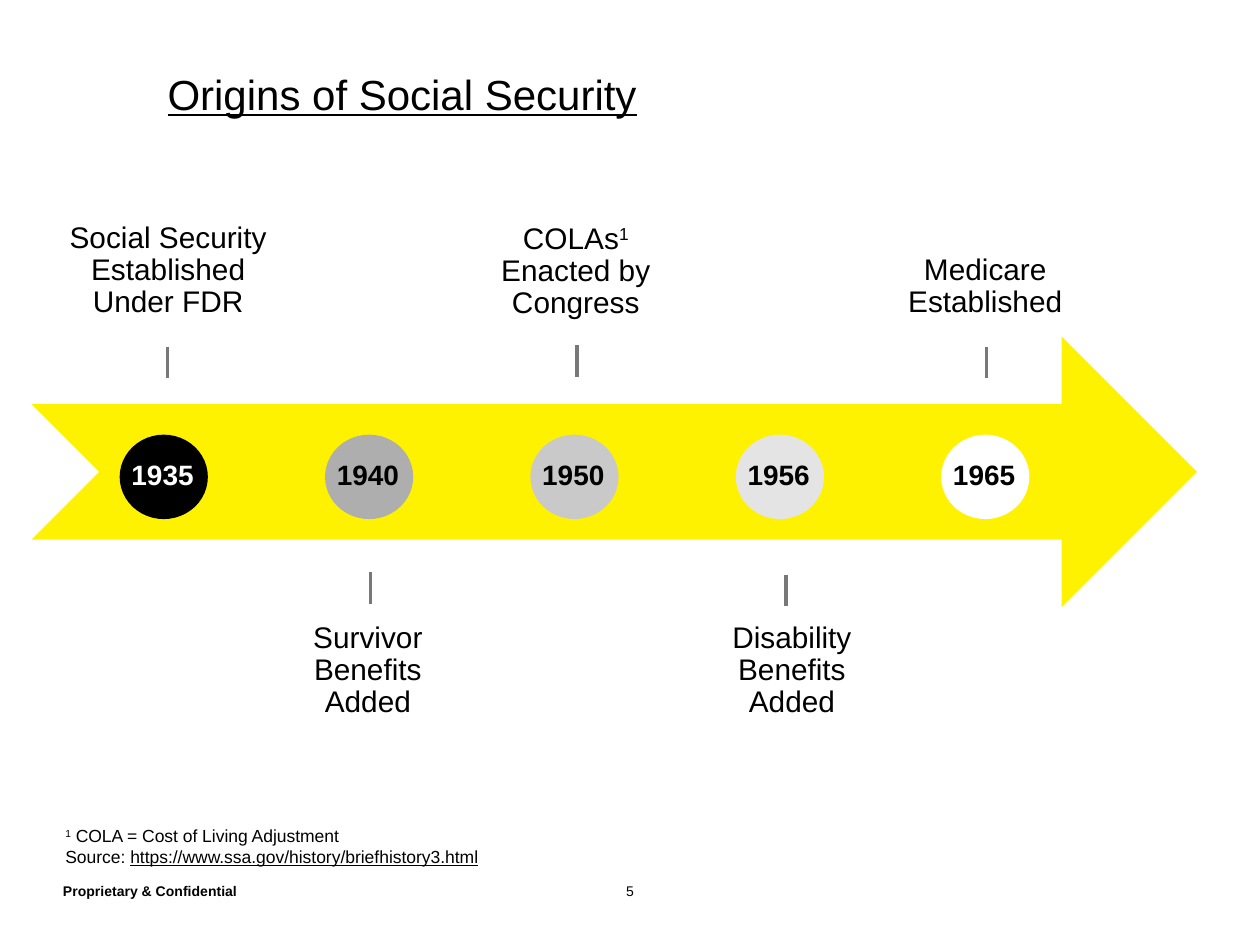
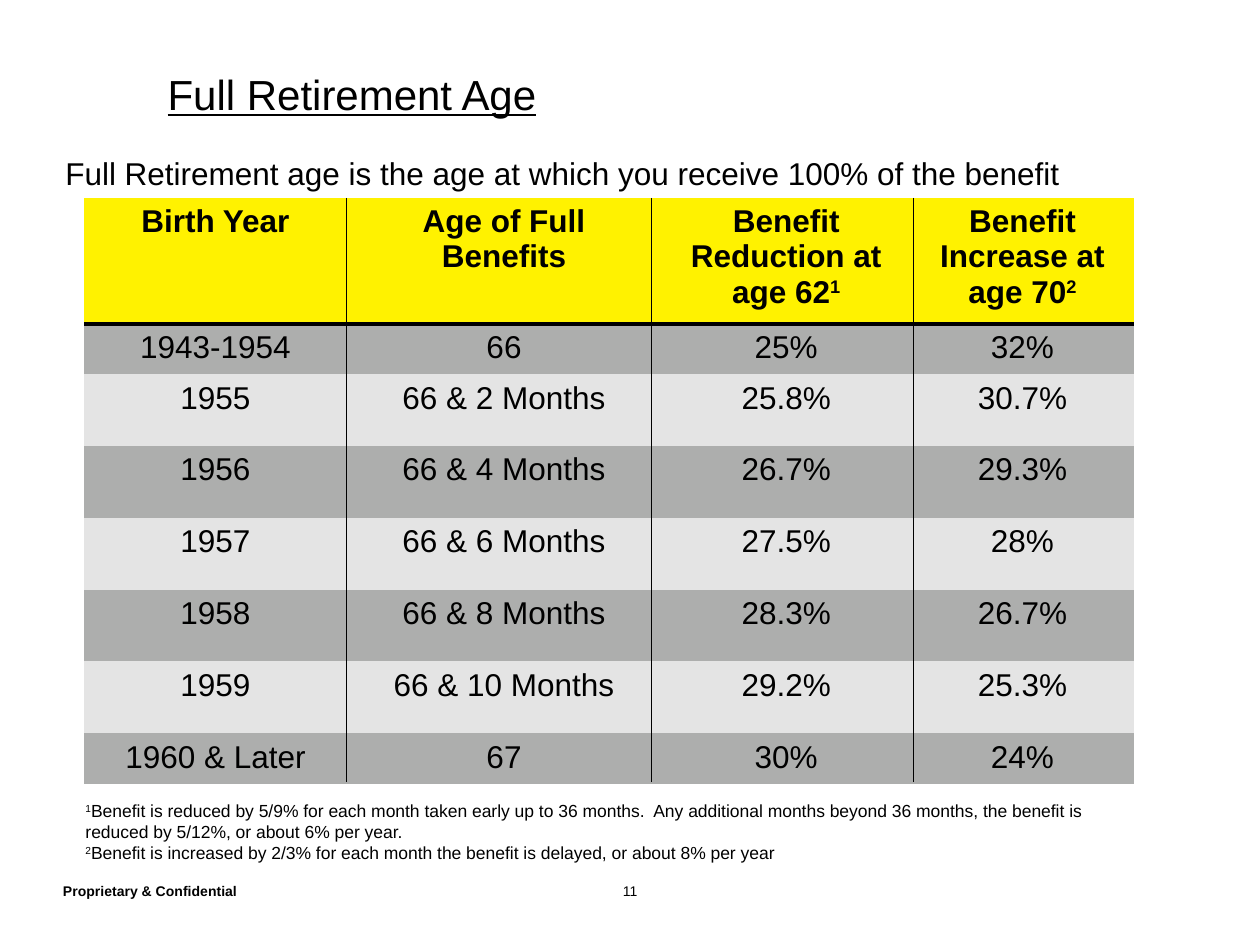
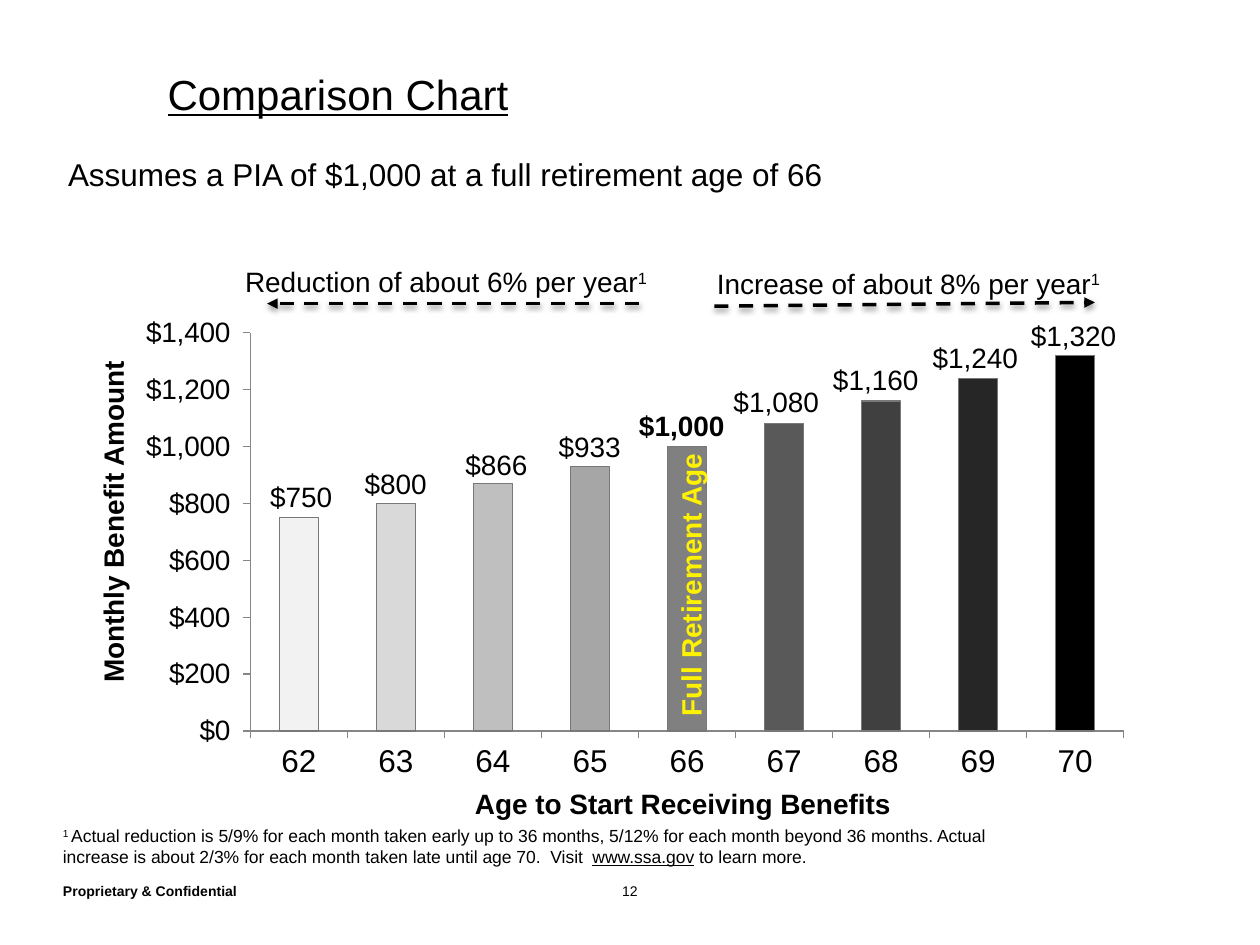
from dataclasses import dataclass
from typing import NamedTuple, Optional, Union

from pptx import Presentation
from pptx.chart.data import CategoryChartData
from pptx.dml.color import RGBColor
from pptx.enum.chart import XL_CHART_TYPE as ChartType, XL_TICK_MARK as TickMark
from pptx.enum.dml import MSO_LINE_DASH_STYLE as Dash
from pptx.enum.shapes import MSO_CONNECTOR as Connector, MSO_SHAPE as Preset
from pptx.enum.text import MSO_ANCHOR as Anchor, PP_ALIGN as Align
from pptx.oxml import parse_xml
from pptx.oxml.ns import nsdecls, qn
from pptx.slide import Slide
from pptx.util import Emu, Pt

EMU_PER_PX = 9144
FONT = "Arial"
NO_GRID_STYLE = "{2D5ABB26-0587-4C30-8999-92F81FD0307C}"
COLORS = {
    "black": "000000",
    "white": "FFFFFF",
    "yellow": "FFF200",
    "gray": "ADAEAD",
    "silver": "C9C9C9",
    "pale": "E4E4E4",
    "rule": "777877",
    "axis": "868686",
}
BAR_COLORS = ("F2F2F2", "D9D9D9", "BFBFBF", "A6A6A6", "808080",
              "595959", "404040", "262626", "000000")


class Box(NamedTuple):
    """Position and size in px."""
    left: int
    top: int
    width: int
    height: int


class Span(NamedTuple):
    """Piece of a paragraph with its own emphasis."""
    text: str
    raised: bool = False
    underlined: bool = False


Line = Union[str, tuple[Span, ...]]


@dataclass(frozen=True)
class Style:
    """Look of a block of text."""
    size: int
    bold: bool = False
    underlined: bool = False
    color: str = "black"
    align: Align = Align.LEFT
    anchor: Anchor = Anchor.TOP
    inset: tuple[int, int] = (0, 0)
    spacing: Optional[Union[float, Pt]] = None
    wrap: bool = True


@dataclass(frozen=True)
class Rule:
    """Straight line from one point to another."""
    start: tuple[int, int]
    end: tuple[int, int]
    color: str = "rule"
    width: int = 2
    arrow: bool = False


class Milestone(NamedTuple):
    """Year on the timeline with its event."""
    year: str
    fill: str
    year_color: str
    event: Line
    event_box: Box
    above: bool
    tick: tuple[int, int]


TITLE = Style(24, underlined=True, spacing=Pt(32))
CONFIDENTIAL = Style(8, bold=True, anchor=Anchor.BOTTOM)
PAGE_NUMBER = Style(8, align=Align.CENTER, anchor=Anchor.BOTTOM)
FOOTNOTE = Style(10, inset=(10, 5))
SOURCE_NOTE = Style(10, inset=(10, 5), wrap=False)
LEAD = Style(18, inset=(10, 5))
ASSUMPTION = Style(18, spacing=Pt(20))
EVENT_ABOVE = Style(17, align=Align.CENTER, anchor=Anchor.BOTTOM, inset=(13, 13), spacing=0.9)
EVENT_BELOW = Style(17, align=Align.CENTER, inset=(13, 13), spacing=0.9)
YEAR_DARK = Style(16, bold=True, align=Align.CENTER, spacing=Pt(12))
YEAR_LIGHT = Style(16, bold=True, color="white", align=Align.CENTER, spacing=Pt(12))
HEADER_CELL = Style(18, bold=True, align=Align.CENTER)
BODY_CELL = Style(18, align=Align.CENTER)
AMOUNT = Style(16, align=Align.CENTER, inset=(10, 5))
KEY_AMOUNT = Style(16, bold=True, align=Align.CENTER, inset=(10, 5))
AXIS_TITLE = Style(16, bold=True, spacing=Pt(20))
BAR_TITLE = Style(16, bold=True, color="yellow", spacing=Pt(20))
TREND = Style(16, align=Align.CENTER, spacing=Pt(20))

MILESTONES = (
    Milestone("1935", "black", "white", "Social Security Established Under FDR",
              Box(42, 137, 183, 129), True, (133, 275)),
    Milestone("1940", "gray", "black", "Survivor Benefits Added",
              Box(214, 481, 156, 88), False, (294, 454)),
    Milestone("1950", "silver", "black",
              (Span("COLAs"), Span("1", raised=True), Span(" Enacted by Congress")),
              Box(379, 153, 156, 114), True, (458, 274)),
    Milestone("1956", "pale", "black", "Disability Benefits Added",
              Box(564, 481, 129, 90), False, (624, 456)),
    Milestone("1965", "white", "black", "Medicare Established",
              Box(704, 152, 156, 114), True, (783, 275)),
)

AGE_HEADERS: tuple[Line, ...] = (
    "Birth Year",
    "Age of Full Benefits",
    (Span("Benefit Reduction at age 62"), Span("1", raised=True)),
    (Span("Benefit Increase at age 70"), Span("2", raised=True)),
)
AGE_ROWS = (
    ("1943-1954", "66", "25%", "32%"),
    ("1955", "66 & 2 Months", "25.8%", "30.7%"),
    ("1956", "66 & 4 Months", "26.7%", "29.3%"),
    ("1957", "66 & 6 Months", "27.5%", "28%"),
    ("1958", "66 & 8 Months", "28.3%", "26.7%"),
    ("1959", "66 & 10 Months", "29.2%", "25.3%"),
    ("1960 & Later", "67", "30%", "24%"),
)
AGE_COLUMN_WIDTHS = (208, 250, 198, 177)
AGE_ROW_HEIGHTS = (98, 39, 57, 57, 57, 57, 57, 39)

BENEFITS = {"62": 750, "63": 800, "64": 870, "65": 930, "66": 1000,
            "67": 1080, "68": 1160, "69": 1240, "70": 1320}
AMOUNT_LABELS = (
    ("$750", 195, 376), ("$800", 270, 365), ("$866", 350, 350),
    ("$933", 424, 336), ("$1,000", 497, 319), ("$1,080", 572, 300),
    ("$1,160", 651, 283), ("$1,240", 730, 265), ("$1,320", 808, 248),
)


def px(value: int) -> Emu:
    """Turn px into EMU."""
    return Emu(value * EMU_PER_PX)


def rgb(name: str) -> RGBColor:
    """Look up a named colour."""
    return RGBColor.from_string(COLORS[name])


def write_text(text_frame, lines: tuple[Line, ...], style: Style) -> None:
    """Fill a text frame with one paragraph per line."""
    for index, line in enumerate(lines):
        paragraph = text_frame.paragraphs[0] if index == 0 else text_frame.add_paragraph()
        spans = (Span(line),) if isinstance(line, str) else line
        paragraph.text = spans[0].text
        for span in spans[1:]:
            paragraph.add_run().text = span.text
        paragraph.alignment = style.align
        paragraph.line_spacing = style.spacing
        for run, span in zip(paragraph.runs, spans):
            font = run.font
            font.name, font.size, font.bold = FONT, Pt(style.size), style.bold
            font.underline = style.underlined or span.underlined
            font.color.rgb = rgb(style.color)
            if span.raised:
                run._r.get_or_add_rPr().set("baseline", "30000")


def add_text(slide: Slide, box: Box, style: Style, *lines: Line, rotation: int = 0) -> None:
    """Place a text box."""
    shape = slide.shapes.add_textbox(*map(px, box))
    shape.rotation = rotation
    text_frame = shape.text_frame
    text_frame.word_wrap = style.wrap
    text_frame.vertical_anchor = style.anchor
    text_frame.margin_left = text_frame.margin_right = px(style.inset[0])
    text_frame.margin_top = text_frame.margin_bottom = px(style.inset[1])
    write_text(text_frame, lines, style)


def add_preset(slide: Slide, preset: Preset, box: Box, fill: str):
    """Place a filled preset shape without outline."""
    shape = slide.shapes.add_shape(preset, *map(px, box))
    shape.shadow.inherit = False
    shape.fill.solid()
    shape.fill.fore_color.rgb = rgb(fill)
    shape.line.fill.background()
    return shape


def add_rule(slide: Slide, rule: Rule) -> None:
    """Draw a line, or a dashed and shadowed arrow."""
    connector = slide.shapes.add_connector(
        Connector.STRAIGHT, *map(px, rule.start + rule.end))
    connector.line.color.rgb = rgb(rule.color)
    connector.line.width = Pt(rule.width)
    shadow = ""
    if rule.arrow:
        connector.line.dash_style = Dash.DASH
        connector.line._get_or_add_ln().append(
            parse_xml(f'<a:tailEnd {nsdecls("a")} type="triangle"/>'))
        shadow = ('<a:outerShdw blurRad="40000" dist="20000" dir="5400000" rotWithShape="0">'
                  f'<a:srgbClr val="{COLORS["black"]}"><a:alpha val="38000"/></a:srgbClr>'
                  '</a:outerShdw>')
    connector._element.spPr.append(
        parse_xml(f'<a:effectLst {nsdecls("a")}>{shadow}</a:effectLst>'))


def add_page(presentation, title: str, number: int) -> Slide:
    """Add a slide with its title and footer."""
    slide = presentation.slides.add_slide(presentation.slide_layouts[6])
    add_text(slide, Box(50, 701, 816, 13), CONFIDENTIAL, "Proprietary & Confidential")
    add_text(slide, Box(474, 701, 52, 13), PAGE_NUMBER, str(number))
    add_text(slide, Box(133, 50, 840, 99), TITLE, title)
    return slide


def build_origins(presentation) -> None:
    """Build the timeline slide."""
    slide = add_page(presentation, "Origins of Social Security", 5)
    add_text(slide, Box(42, 650, 352, 44), SOURCE_NOTE,
             (Span("1", raised=True), Span(" COLA = Cost of Living Adjustment")),
             (Span("Source: "),
              Span("https://www.ssa.gov/history/briefhistory3.html", underlined=True)))
    add_preset(slide, Preset.NOTCHED_RIGHT_ARROW, Box(25, 267, 925, 215), "yellow")
    for index, milestone in enumerate(MILESTONES):
        left = 95 + 163 * index
        add_preset(slide, Preset.OVAL, Box(left, 345, 70, 67), milestone.fill)
        year_style = YEAR_LIGHT if milestone.year_color == "white" else YEAR_DARK
        add_text(slide, Box(left + 7, 373, 54, 15), year_style, milestone.year)
        event_style = EVENT_ABOVE if milestone.above else EVENT_BELOW
        add_text(slide, milestone.event_box, event_style, milestone.event)
        x, y = milestone.tick
        add_rule(slide, Rule((x, y), (x, y + 25)))


def add_age_table(slide: Slide, box: Box) -> None:
    """Place the table of retirement ages."""
    rows = (AGE_HEADERS,) + AGE_ROWS
    table = slide.shapes.add_table(len(rows), len(AGE_HEADERS), *map(px, box)).table
    table.first_row = table.horz_banding = False
    table._tbl.tblPr.find(qn("a:tableStyleId")).text = NO_GRID_STYLE
    for column, width in zip(table.columns, AGE_COLUMN_WIDTHS):
        column.width = px(width)
    for row_index, (lines, height) in enumerate(zip(rows, AGE_ROW_HEIGHTS)):
        table.rows[row_index].height = px(height)
        fill = "yellow" if row_index == 0 else ("pale", "gray")[row_index % 2]
        style = HEADER_CELL if row_index == 0 else BODY_CELL
        for column_index, line in enumerate(lines):
            cell = table.cell(row_index, column_index)
            cell.fill.solid()
            cell.fill.fore_color.rgb = rgb(fill)
            write_text(cell.text_frame, (line,), style)


def build_retirement_age(presentation) -> None:
    """Build the table slide."""
    slide = add_page(presentation, "Full Retirement Age", 11)
    add_text(slide, Box(42, 117, 892, 40), LEAD,
             "Full Retirement age is the age at which you receive 100% of the benefit")
    add_age_table(slide, Box(67, 157, 833, 464))
    add_text(slide, Box(58, 630, 825, 61), FOOTNOTE,
             (Span("1", raised=True),
              Span("Benefit is reduced by 5/9% for each month taken early up to 36 months.  "
                   "Any additional months beyond 36 months, the benefit is reduced by 5/12%, "
                   "or about 6% per year.")),
             (Span("2", raised=True),
              Span("Benefit is increased by 2/3% for each month the benefit is delayed, "
                   "or about 8% per year")))
    add_rule(slide, Rule((67, 257), (900, 257), "black"))
    for x in (275, 517, 725):
        add_rule(slide, Rule((x, 157), (x, 621), "black", 1))


def add_benefit_chart(slide: Slide, box: Box) -> None:
    """Place the column chart of monthly benefits."""
    data = CategoryChartData()
    data.categories = list(BENEFITS)
    data.add_series("Series 1", list(BENEFITS.values()))
    chart = slide.shapes.add_chart(ChartType.COLUMN_CLUSTERED, *map(px, box), data).chart
    chart.has_legend = chart.has_title = False
    chart.font.name, chart.font.size = "Calibri", Pt(18)
    chart.font.color.rgb = rgb("black")
    for axis, size in ((chart.category_axis, 18), (chart.value_axis, 16)):
        axis.has_major_gridlines = False
        axis.major_tick_mark = TickMark.OUTSIDE
        axis.format.line.color.rgb = rgb("axis")
        font = axis.tick_labels.font
        font.name, font.size = FONT, Pt(size)
        font.color.rgb = rgb("black")
    value_axis = chart.value_axis
    value_axis.minimum_scale, value_axis.maximum_scale, value_axis.major_unit = 0, 1400, 200
    value_axis.tick_labels.number_format = '"$"#,##0_);[Red]\\("$"#,##0\\)'
    value_axis.tick_labels.number_format_is_linked = False
    plot = chart.plots[0]
    plot.gap_width = 150
    plot.vary_by_categories = False
    series = plot.series[0]
    series.format.fill.solid()
    series.format.fill.fore_color.rgb = rgb("pale")
    for index, color in enumerate(BAR_COLORS):
        bar = series.points[index].format
        bar.fill.solid()
        bar.fill.fore_color.rgb = RGBColor.from_string(color)
        bar.line.color.rgb = rgb("rule")
        bar.line.width = Pt(0.75)
    plot_area = chart._chartSpace.chart.plotArea
    for layout in plot_area.findall(qn("c:layout")):
        plot_area.remove(layout)
    sizes = "".join(f'<c:{tag} val="{value}"/>' for tag, value in (
        ("layoutTarget", "inner"), ("xMode", "edge"), ("yMode", "edge"),
        ("x", 0.12), ("y", 0.05), ("w", 0.86), ("h", 0.83)))
    plot_area.insert(0, parse_xml(
        f'<c:layout {nsdecls("c")}><c:manualLayout>{sizes}</c:manualLayout></c:layout>'))


def build_comparison(presentation) -> None:
    """Build the chart slide."""
    slide = add_page(presentation, "Comparison Chart", 12)
    add_text(slide, Box(40, 650, 785, 44), FOOTNOTE,
             (Span("1 ", raised=True),
              Span("Actual reduction is 5/9% for each month taken early up to 36 months, "
                   "5/12% for each month beyond 36 months. Actual increase is about 2/3% "
                   "for each month taken late until age 70.  Visit  "),
              Span("www.ssa.gov", underlined=True), Span(" to learn more.")))
    add_text(slide, Box(54, 125, 796, 67), ASSUMPTION,
             "Assumes a PIA of $1,000 at a full retirement age of 66")
    add_benefit_chart(slide, Box(102, 245, 806, 381))
    for amount, left, top in AMOUNT_LABELS:
        style = KEY_AMOUNT if amount == "$1,000" else AMOUNT
        add_text(slide, Box(left, top, 88, 33), style, amount)
    add_text(slide, Box(377, 623, 340, 33), AXIS_TITLE, "Age to Start Receiving Benefits")
    add_text(slide, Box(-41, 398, 260, 28), AXIS_TITLE, "Monthly Benefit Amount", rotation=270)
    for left, top, trend in ((189, 209, "Reduction of about 6% per year"),
                             (556, 210, "Increase of about 8% per year")):
        add_text(slide, Box(left, top, 330, 28), TREND, (Span(trend), Span("1", raised=True)))
    for start, end in (((507, 241), (212, 241)), ((567, 243), (869, 240))):
        add_rule(slide, Rule(start, end, "black", arrow=True))
    add_text(slide, Box(440, 443, 219, 32), BAR_TITLE, "Full Retirement Age", rotation=270)


def main() -> None:
    """Build the slides and save the file."""
    presentation = Presentation()
    presentation.slide_width, presentation.slide_height = px(1000), px(750)
    build_origins(presentation)
    build_retirement_age(presentation)
    build_comparison(presentation)
    presentation.save("out.pptx")


if __name__ == "__main__":
    main()
